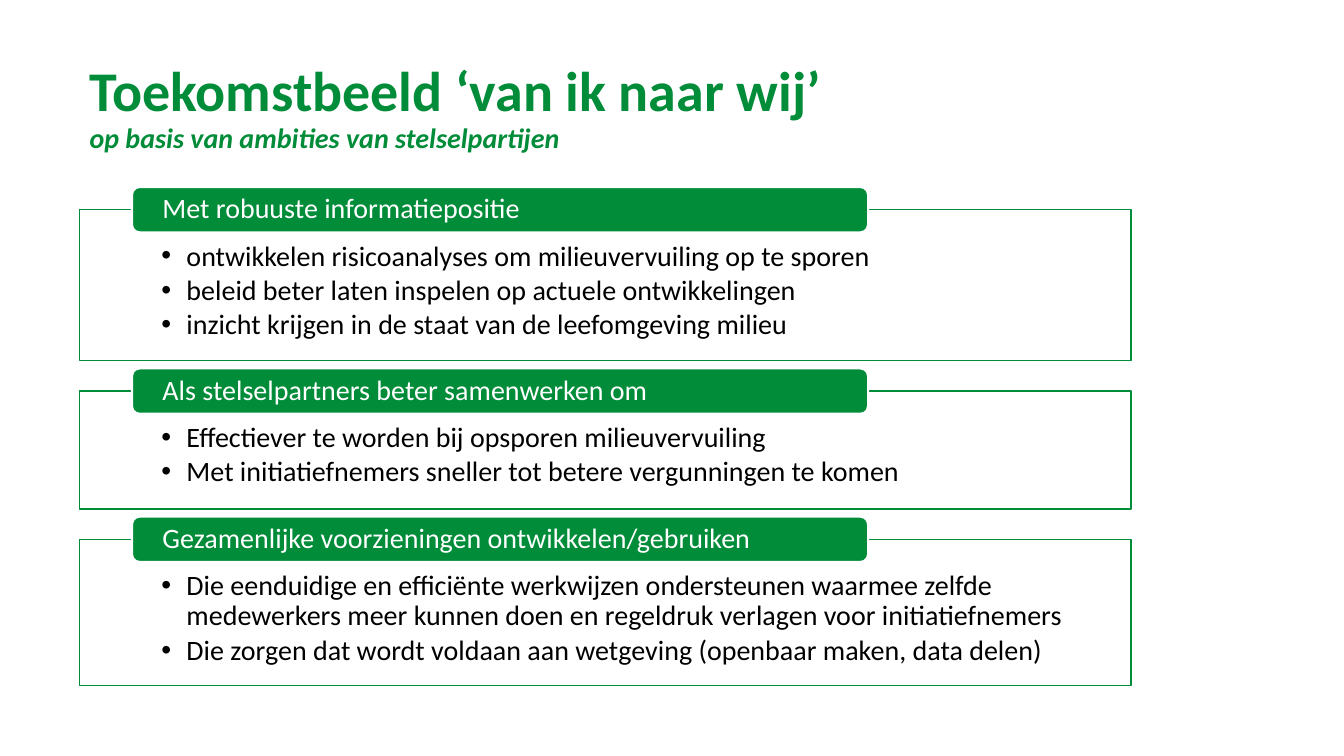
from lxml import etree
from pptx import Presentation
from pptx.dml.color import RGBColor
from pptx.enum.shapes import MSO_SHAPE as Shape
from pptx.enum.text import MSO_ANCHOR as Anchor, PP_ALIGN as Align
from pptx.oxml.ns import qn
from pptx.util import Inches, Pt

# Content
TITLE = "Toekomstbeeld ‘van ik naar wij’"
SUBTITLE = "op basis van ambities van stelselpartijen"
# heading, frame height, ambitions
SECTIONS = [
    ("Met robuuste informatiepositie", 1.5, [
        "ontwikkelen risicoanalyses om milieuvervuiling op te sporen",
        "beleid beter laten inspelen op actuele ontwikkelingen",
        "inzicht krijgen in de staat van de leefomgeving milieu",
    ]),
    ("Als stelselpartners beter samenwerken om", 1.17, [
        "Effectiever te worden bij opsporen milieuvervuiling",
        "Met initiatiefnemers sneller tot betere vergunningen te komen",
    ]),
    ("Gezamenlijke voorzieningen ontwikkelen/gebruiken", 1.45, [
        "Die eenduidige en efficiënte werkwijzen ondersteunen waarmee zelfde "
        "medewerkers meer kunnen doen en regeldruk verlagen voor initiatiefnemers",
        "Die zorgen dat wordt voldaan aan wetgeving (openbaar maken, data delen)",
    ]),
]

# Style and layout, in inches
GREEN, WHITE, BLACK = "008C38", "FFFFFF", "000000"
FONT = "Calibri"
LEFT, WIDTH = 0.79, 10.43
FIRST_TOP, GAP = 2.08, 0.3
TAB_LEFT, TAB_WIDTH, TAB_HEIGHT = 1.31, 7.3, 0.45
INDENT = 0.25


def color(hex_code):
    return RGBColor.from_string(hex_code)


def add_box(kind, left, top, width, height, fill, line, line_width):
    box = slide.shapes.add_shape(
        kind, Inches(left), Inches(top), Inches(width), Inches(height))
    box.shadow.inherit = False
    box.fill.solid()
    box.fill.fore_color.rgb = color(fill)
    box.line.color.rgb = color(line)
    box.line.width = Pt(line_width)
    return box


def set_frame(frame, anchor, insets):
    frame.word_wrap = True
    frame.vertical_anchor = anchor
    (frame.margin_left, frame.margin_top,
     frame.margin_right, frame.margin_bottom) = map(Inches, insets)


def add_bullet(paragraph):
    properties = paragraph._p.get_or_add_pPr()
    properties.set("marL", str(Inches(INDENT)))
    properties.set("indent", str(-Inches(INDENT)))
    etree.SubElement(properties, qn("a:buFont"), typeface="Arial")
    etree.SubElement(properties, qn("a:buChar"), char="•")


def add_text(paragraph, text, size=20, ink=BLACK, bold=False, italic=False,
             bullet=False, after=0):
    if bullet:
        add_bullet(paragraph)
    paragraph.alignment = Align.LEFT
    paragraph.line_spacing = 0.9
    paragraph.space_after = Pt(after)
    run = paragraph.add_run()
    run.text = text
    run.font.name, run.font.size = FONT, Pt(size)
    run.font.bold, run.font.italic = bold, italic
    run.font.color.rgb = color(ink)


prs = Presentation()
prs.slide_width, prs.slide_height = Inches(13.33), Inches(7.5)
slide = prs.slides.add_slide(prs.slide_layouts[6])

# Title with subtitle on the next line
heading = slide.shapes.add_textbox(
    Inches(LEFT), Inches(0.39), Inches(WIDTH), Inches(1.38)).text_frame
set_frame(heading, Anchor.MIDDLE, (0.1, 0.05, 0.1, 0.05))
title_line = heading.paragraphs[0]
add_text(title_line, TITLE, size=40, ink=GREEN, bold=True)
title_line.add_line_break()
add_text(title_line, SUBTITLE, ink=GREEN, bold=True, italic=True)

# Sections: a frame with ambitions and a green tab across its top edge
top = FIRST_TOP
for name, height, ambitions in SECTIONS:
    body = add_box(Shape.RECTANGLE, LEFT, top, WIDTH, height,
                   WHITE, GREEN, 1).text_frame
    set_frame(body, Anchor.TOP, (0.81, 0.32, 0.63, 0.16))
    for i, ambition in enumerate(ambitions):
        paragraph = body.add_paragraph() if i else body.paragraphs[0]
        add_text(paragraph, ambition, bullet=True, after=3)

    tab = add_box(Shape.ROUNDED_RECTANGLE, TAB_LEFT, top - TAB_HEIGHT / 2,
                  TAB_WIDTH, TAB_HEIGHT, GREEN, WHITE, 1.5).text_frame
    set_frame(tab, Anchor.MIDDLE, (0.28, 0, 0.28, 0))
    add_text(tab.paragraphs[0], name, ink=WHITE)
    top += height + GAP

prs.save("out.pptx")
